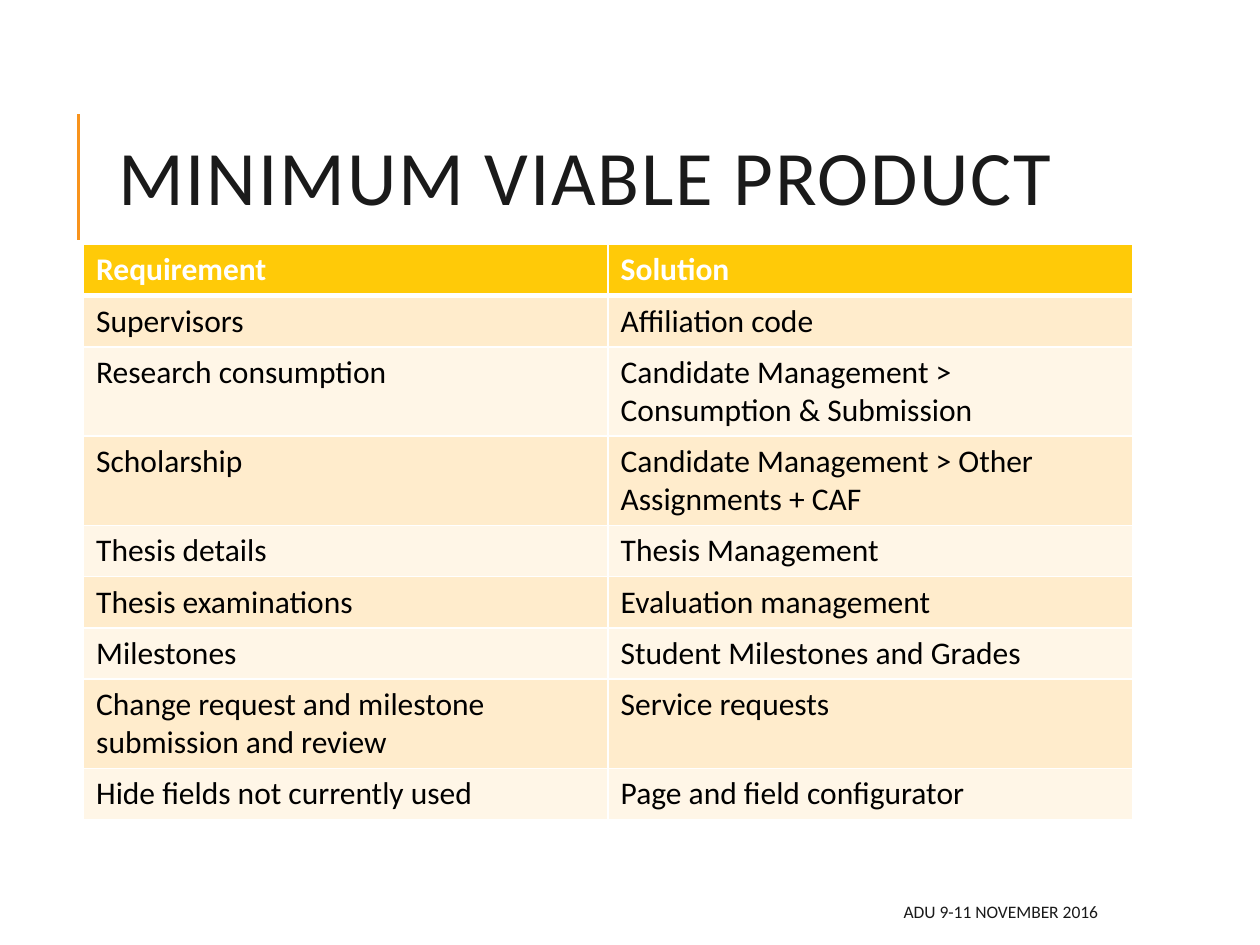
import dataclasses

import lxml.etree
import pptx
import pptx.dml.color
import pptx.enum.shapes
import pptx.enum.text
import pptx.oxml.ns
import pptx.util

Pt = pptx.util.Pt
ALIGN = pptx.enum.text.PP_ALIGN
ANCHOR = pptx.enum.text.MSO_ANCHOR


@dataclasses.dataclass(frozen=True)
class Theme:
    font: str = "Calibri"
    ink: str = "1A1A1A"
    accent: str = "F8931D"
    header_fill: str = "FFCA08"
    header_text: str = "FFFFFF"
    body_text: str = "000000"
    bands: tuple = ("FFECCC", "FFF6E7")
    border: str = "FFFFFF"
    title_size: float = 44
    table_size: float = 18
    footer_size: float = 10


ROWS = [
    ("Requirement", "Solution"),
    ("Supervisors", "Affiliation code"),
    ("Research consumption", "Candidate Management > Consumption & Submission"),
    ("Scholarship", "Candidate Management > Other Assignments + CAF"),
    ("Thesis details", "Thesis Management"),
    ("Thesis examinations", "Evaluation management"),
    ("Milestones", "Student Milestones and Grades"),
    ("Change request and milestone submission and review", "Service requests"),
    ("Hide fields not currently used", "Page and field configurator"),
]
TWO_LINE_ROWS = (2, 3, 7)
ONE_LINE_HEIGHT, TWO_LINE_HEIGHT = 29.2, 51.1


def rgb(color):
    return pptx.dml.color.RGBColor.from_string(color)


def sub(parent, tag, **attrs):
    return lxml.etree.SubElement(parent, pptx.oxml.ns.qn(tag), **attrs)


class SlideBuilder:
    def __init__(self, prs, theme):
        self.theme = theme
        self.s = prs.slides.add_slide(prs.slide_layouts[5])

    def set_text(self, tf, text, size, color, bold=False, align=ALIGN.LEFT):
        tf.text = text
        tf.word_wrap = True
        p = tf.paragraphs[0]
        p.alignment = align
        font = p.runs[0].font
        font.name, font.size, font.bold = self.theme.font, Pt(size), bold
        font.color.rgb = rgb(color)
        return p

    def title(self, text, left, top, width, height):
        sp = self.s.shapes.title
        sp.left, sp.top, sp.width, sp.height = map(Pt, (left, top, width, height))
        tf = sp.text_frame
        p = self.set_text(tf, text, self.theme.title_size, self.theme.ink)
        tf.auto_size = pptx.enum.text.MSO_AUTO_SIZE.NONE
        tf.vertical_anchor = ANCHOR.MIDDLE
        p.line_spacing = 0.8
        p.runs[0]._r.get_or_add_rPr().set("spc", "100")

    def footer(self, text, left, top, width, height):
        sp = self.s.shapes.add_textbox(*map(Pt, (left, top, width, height)))
        sp.text_frame.vertical_anchor = ANCHOR.MIDDLE
        self.set_text(sp.text_frame, text, self.theme.footer_size, self.theme.ink,
                      align=ALIGN.RIGHT)

    def rule(self, x1, y1, x2, y2, weight):
        line = self.s.shapes.add_connector(
            pptx.enum.shapes.MSO_CONNECTOR.STRAIGHT, *map(Pt, (x1, y1, x2, y2)))
        line.line.color.rgb = rgb(self.theme.accent)
        line.line.width = Pt(weight)
        sub(line._element.spPr, "a:effectLst")

    def borders(self, cell, **weights):
        """Draw cell edges; keys are L, R, T, B and values are points."""
        tcPr = cell._tc.get_or_add_tcPr()
        for edge, weight in weights.items():
            ln = sub(tcPr, "a:ln" + edge, w=str(Pt(weight)))
            sub(sub(ln, "a:solidFill"), "a:srgbClr", val=self.theme.border)

    def table(self, rows, heights, left, top, width):
        theme = self.theme
        table = self.s.shapes.add_table(
            len(rows), len(rows[0]),
            *map(Pt, (left, top, width, sum(heights)))).table
        for i, (texts, height) in enumerate(zip(rows, heights)):
            table.rows[i].height = Pt(height)
            header = i == 0
            fill = theme.header_fill if header else theme.bands[(i - 1) % 2]
            color = theme.header_text if header else theme.body_text
            for j, text in enumerate(texts):
                cell = table.cell(i, j)
                self.set_text(cell.text_frame, text, theme.table_size, color, header)
                self.borders(cell, L=1, R=1, T=3 if i == 1 else 1,
                             B=3 if header else 1)
                cell.fill.solid()
                cell.fill.fore_color.rgb = rgb(fill)


def main():
    prs = pptx.Presentation()
    prs.slide_width, prs.slide_height = Pt(720), Pt(540)
    b = SlideBuilder(prs, Theme())
    b.rule(44.75, 137, 44.75, 65, 1.5)
    b.title("MINIMUM VIABLE PRODUCT", 60.5, 46, 574, 118)
    b.footer("ADU 9-11 NOVEMBER 2016", 286, 510, 348.5, 21.6)
    heights = [TWO_LINE_HEIGHT if i in TWO_LINE_ROWS else ONE_LINE_HEIGHT
               for i in range(len(ROWS))]
    b.table(ROWS, heights, 47.75, 139.8, 599.5)
    prs.save("out.pptx")


if __name__ == "__main__":
    main()
